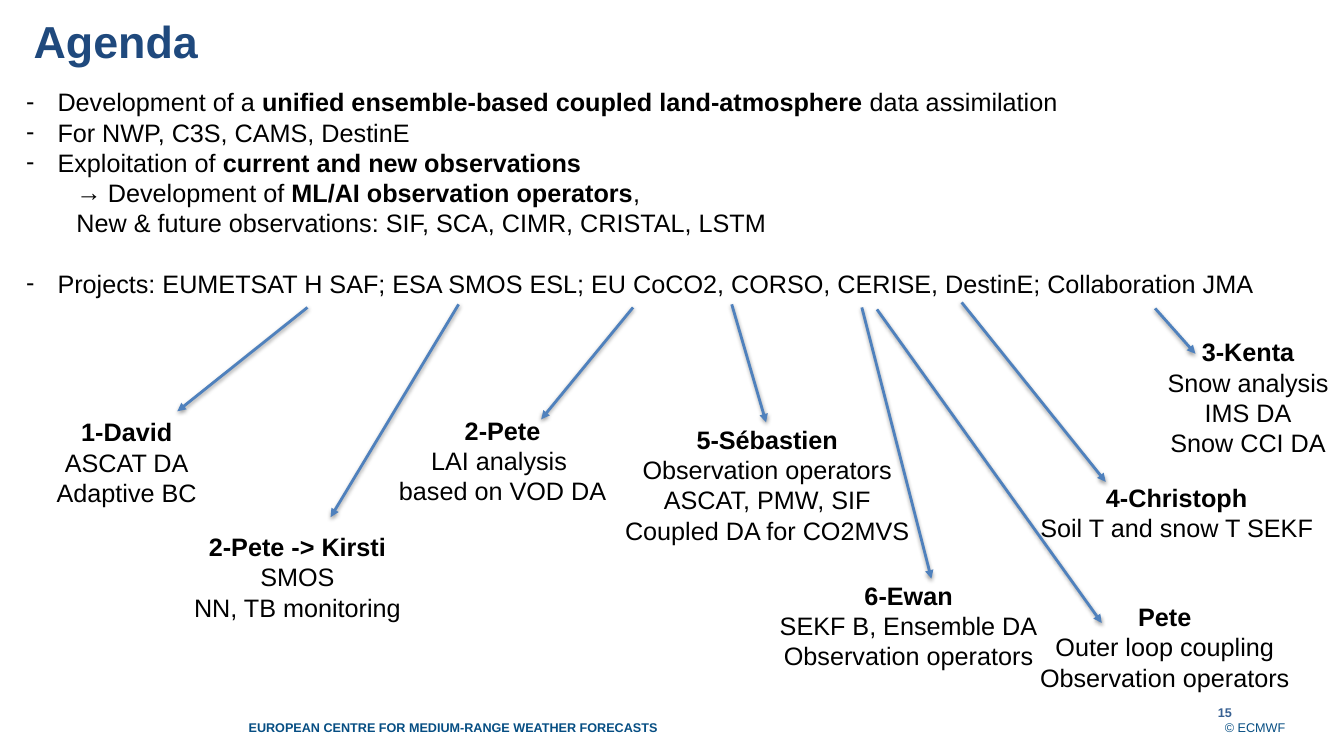
"""Build the agenda slide linking land data assimilation projects to speakers."""
from typing import NamedTuple

from lxml import etree
from pptx import Presentation
from pptx.dml.color import RGBColor
from pptx.enum.shapes import MSO_CONNECTOR
from pptx.enum.text import MSO_ANCHOR, PP_ALIGN
from pptx.oxml.ns import qn
from pptx.util import Pt

STRAIGHT = MSO_CONNECTOR.STRAIGHT
TOP, BOTTOM = MSO_ANCHOR.TOP, MSO_ANCHOR.BOTTOM
LEFT, CENTER, RIGHT = PP_ALIGN.LEFT, PP_ALIGN.CENTER, PP_ALIGN.RIGHT

BLACK = RGBColor(0x00, 0x00, 0x00)
TITLE_BLUE = RGBColor(0x1F, 0x49, 0x7D)
FOOTER_BLUE = RGBColor(0x06, 0x4E, 0x83)
NUMBER_BLUE = RGBColor(0x37, 0x60, 0x92)
ARROW_BLUE = RGBColor(0x4F, 0x81, 0xBD)
FONT = "Arial"
BODY_SIZE = 18
LINE_HEIGHT = 21.6


class Box(NamedTuple):
    left: float
    top: float
    width: float
    height: float


class Span(NamedTuple):
    text: str
    bold: bool = False


class Point(NamedTuple):
    spans: list[Span]
    bullet: str = "-"
    level: int = 0
    margin: float = 22.5
    hanging: float = 22.5
    before: float = 0


class Talk(NamedTuple):
    box: Box
    speaker: str
    topics: list[str]


class Arrow(NamedTuple):
    x1: float
    y1: float
    x2: float
    y2: float


class Caption(NamedTuple):
    box: Box
    span: Span
    size: float
    color: RGBColor
    align: PP_ALIGN
    anchor: MSO_ANCHOR = BOTTOM
    line_spacing: float | None = None


CAPTIONS = [
    Caption(Box(764, 496, 154, 29), Span("© ECMWF"), 9, FOOTER_BLUE, RIGHT),
    Caption(Box(164, 507, 319, 18),
            Span("EUROPEAN CENTRE FOR MEDIUM-RANGE WEATHER FORECASTS", True),
            9, FOOTER_BLUE, CENTER),
    Caption(Box(790, 497, 170, 17), Span("15", True), 9, NUMBER_BLUE, CENTER),
    Caption(Box(24, 20, 743, 29), Span("Agenda", True), 32, TITLE_BLUE, LEFT, TOP, 28),
]

TALKS = [
    Talk(Box(33, 294, 115, 73), "1-David", ["ASCAT DA", "Adaptive BC"]),
    Talk(Box(131, 376, 163, 73), "2-Pete -> Kirsti", ["SMOS", "NN, TB monitoring"]),
    Talk(Box(277, 293, 164, 73), "2-Pete", ["LAI analysis ", "based on VOD DA"]),
    Talk(Box(549, 411, 200, 94), "6-Ewan",
         ["SEKF B, Ensemble DA", "Observation operators"]),
    Talk(Box(735, 341, 211, 51), "4-Christoph", ["Soil T and snow T SEKF"]),
    Talk(Box(438, 299.5, 220, 117), "5-Sébastien",
         ["Observation operators", "ASCAT, PMW, SIF", "Coupled DA for CO2MVS"]),
    Talk(Box(735, 426, 194, 73), "Pete", ["Outer loop coupling", "Observation operators"]),
    Talk(Box(826.5, 237, 130, 94), "3-Kenta",
         ["Snow analysis", "IMS DA", "Snow CCI DA"]),
]

ARROWS = [
    Arrow(219.6, 219.6, 126.7, 293.8),
    Arrow(327.6, 217.4, 236.2, 369.4),
    Arrow(452.2, 219.6, 386.6, 299.5),
    Arrow(522.7, 217.4, 547.2, 301.7),
    Arrow(615.6, 219.6, 665.3, 413.3),
    Arrow(626.4, 221, 787, 445),
    Arrow(686.9, 216, 789.8, 344.2),
    Arrow(825.1, 220.3, 853.9, 252.7),
]

AGENDA_BOX = Box(11.5, 58.3, 912, 181.5)
AGENDA = [
    Point([Span("Development of a "),
           Span("unified ensemble-based coupled land-atmosphere ", True),
           Span("data assimilation")]),
    Point([Span("For NWP, C3S, CAMS, DestinE")]),
    Point([Span("Exploitation of"), Span(" current and new observations", True)]),
    Point([Span("Development of "), Span("ML/AI observation operators", True), Span(",")],
          bullet="→", level=1, margin=58.5),
    Point([Span("New & future observations: SIF, SCA, CIMR, CRISTAL, LSTM")],
          bullet="", level=1, margin=36, hanging=0),
    Point([Span("Projects: EUMETSAT H SAF; ESA SMOS ESL; EU CoCO2, CORSO, CERISE, "
                "DestinE; Collaboration JMA")], before=LINE_HEIGHT),
]


def add_frame(slide, box: Box, wrap: bool):
    """Add a text box and return its text frame."""
    frame = slide.shapes.add_textbox(*map(Pt, box)).text_frame
    frame.word_wrap = wrap
    return frame


def next_paragraph(frame, index: int):
    """Return the first paragraph of a frame, or a new one after it."""
    return frame.add_paragraph() if index else frame.paragraphs[0]


def add_span(paragraph, span: Span, size: float = BODY_SIZE, color: RGBColor = BLACK) -> None:
    """Append one formatted run."""
    run = paragraph.add_run()
    run.text = span.text
    run.font.name = FONT
    run.font.size = Pt(size)
    run.font.bold = span.bold
    run.font.color.rgb = color


def add_caption(slide, caption: Caption) -> None:
    """Draw a single-line text without insets."""
    frame = add_frame(slide, caption.box, True)
    frame.margin_left = frame.margin_right = frame.margin_top = frame.margin_bottom = 0
    frame.vertical_anchor = caption.anchor
    line = frame.paragraphs[0]
    line.alignment = caption.align
    if caption.line_spacing:
        line.line_spacing = Pt(caption.line_spacing)
    add_span(line, caption.span, caption.size, caption.color)


def add_talk(slide, talk: Talk) -> None:
    """Draw a bold speaker name above the topics of the talk."""
    frame = add_frame(slide, talk.box, False)
    for index, text in enumerate([talk.speaker, *talk.topics]):
        line = next_paragraph(frame, index)
        line.alignment = CENTER
        add_span(line, Span(text, index == 0))


def add_arrow(slide, arrow: Arrow) -> None:
    """Draw a shadowed arrow from a project to its talk."""
    link = slide.shapes.add_connector(STRAIGHT, *map(Pt, arrow))
    link.line.color.rgb = ARROW_BLUE
    link.line.width = Pt(2)
    properties = link._element.spPr
    etree.SubElement(properties.find(qn("a:ln")), qn("a:tailEnd"), type="triangle")
    effects = etree.SubElement(properties, qn("a:effectLst"))
    shadow = etree.SubElement(effects, qn("a:outerShdw"), blurRad=str(Pt(3.1)),
                              dist=str(Pt(1.6)), dir="5400000", rotWithShape="0")
    tint = etree.SubElement(shadow, qn("a:srgbClr"), val=str(BLACK))
    etree.SubElement(tint, qn("a:alpha"), val="38000")


def add_agenda(slide, box: Box, points: list[Point]) -> None:
    """Draw the bulleted agenda points."""
    frame = add_frame(slide, box, True)
    for index, point in enumerate(points):
        line = next_paragraph(frame, index)
        line.level = point.level
        if point.before:
            line.space_before = Pt(point.before)
        properties = line._p.get_or_add_pPr()
        properties.set("marL", str(Pt(point.margin)))
        properties.set("indent", str(-Pt(point.hanging)))
        if point.bullet:
            etree.SubElement(properties, qn("a:buFont"), typeface=FONT)
            etree.SubElement(properties, qn("a:buChar"), char=point.bullet)
        else:
            etree.SubElement(properties, qn("a:buNone"))
        for span in point.spans:
            add_span(line, span)


def main() -> None:
    """Assemble and save the slide."""
    deck = Presentation()
    deck.slide_width, deck.slide_height = Pt(960), Pt(540)
    slide = deck.slides.add_slide(deck.slide_layouts[6])
    for caption in CAPTIONS:
        add_caption(slide, caption)
    for talk in TALKS:
        add_talk(slide, talk)
    for arrow in ARROWS:
        add_arrow(slide, arrow)
    add_agenda(slide, AGENDA_BOX, AGENDA)
    deck.save("out.pptx")


if __name__ == "__main__":
    main()
